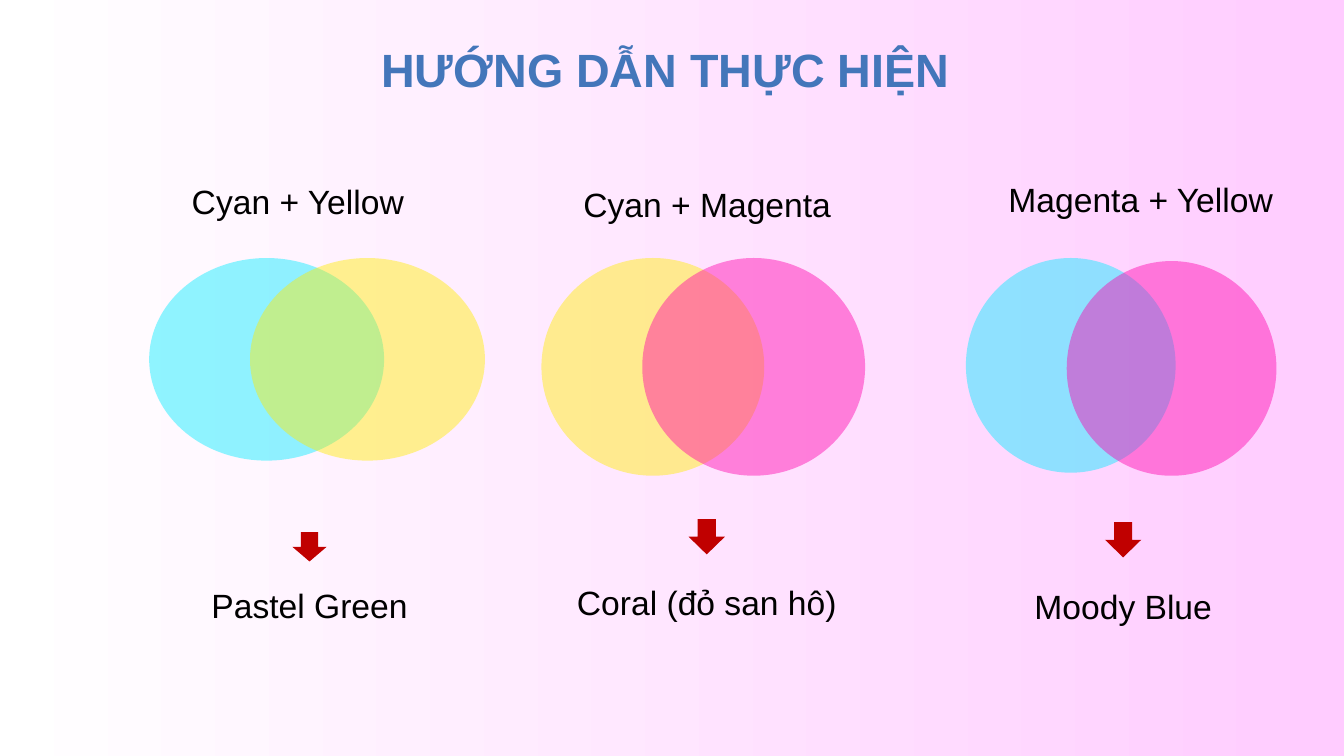
from pptx import Presentation
from pptx.dml.color import RGBColor
from pptx.enum.shapes import MSO_SHAPE as SHAPE
from pptx.enum.text import MSO_ANCHOR as ANCHOR, MSO_AUTO_SIZE as AUTO, PP_ALIGN as ALIGN
from pptx.oxml.ns import qn
from pptx.util import Inches, Pt
from lxml import etree

CYAN, YELLOW, MAGENTA = "00EDFF", "FFED00", "FF00AB"
TEXT_W, TEXT_H = 3.5, 0.5


def rgb(value):
    return RGBColor.from_string(value)


def place(sp, x, y, w, h):
    sp.left, sp.top, sp.width, sp.height = (Inches(v) for v in (x, y, w, h))


def write(sp, text, size=24, color="000000", bold=False):
    tf = sp.text_frame
    tf.word_wrap = True
    tf.auto_size = AUTO.NONE
    tf.vertical_anchor = ANCHOR.TOP
    p = tf.paragraphs[0]
    p.alignment = ALIGN.CENTER
    r = p.add_run()
    r.text = text
    r.font.name = "Arial"
    r.font.size = Pt(size)
    r.font.bold = bold
    r.font.color.rgb = rgb(color)


def add_label(s, text, center, y):
    sp = s.shapes.add_textbox(0, 0, 0, 0)
    place(sp, center - TEXT_W / 2, y, TEXT_W, TEXT_H)
    write(sp, text)


def add_solid(s, kind, x, y, w, h, color, alpha=None):
    sp = s.shapes.add_shape(kind, 0, 0, 0, 0)
    place(sp, x, y, w, h)
    sp.shadow.inherit = False
    sp.fill.solid()
    sp.fill.fore_color.rgb = rgb(color)
    sp.line.fill.background()
    if alpha is not None:
        clr = sp.fill._xPr.find(qn("a:solidFill"))[0]
        etree.SubElement(clr, qn("a:alpha")).set("val", str(alpha * 1000))


def add_background(s):
    fill = s.background.fill
    fill.gradient()
    fill.gradient_angle = 0
    for stop, color in zip(fill.gradient_stops, ("FFFFFF", "FFCCFF")):
        stop.color.rgb = rgb(color)
    for stop, position in zip(fill.gradient_stops, (0, 1)):
        stop.position = position


def add_title(s, x, y, w, h):
    sp = s.shapes.title
    place(sp, x, y, w, h)
    write(sp, "HƯỚNG DẪN THỰC HIỆN ", size=33.3, color="4376BA", bold=True)


def add_discs(s, x, y, w, h, colors, drop=0):
    for i, color in enumerate(colors):
        add_solid(s, SHAPE.OVAL, x + i, y + i * drop, w, h, color, alpha=44)


def add_result(s, center, y, w, h, text, text_y):
    add_solid(s, SHAPE.DOWN_ARROW, center - w / 2, y, w, h, "C00000")
    add_label(s, text, center, text_y)


def main():
    prs = Presentation()
    prs.slide_width, prs.slide_height = Inches(13.33), Inches(7.5)
    s = prs.slides.add_slide(prs.slide_layouts[5])
    add_background(s)
    add_title(s, 2.97, 0.36, 7.39, 0.66)

    add_label(s, "Cyan + Yellow ", 3, 1.75)
    add_discs(s, 1.48, 2.56, 2.33, 2.01, (CYAN, YELLOW))
    add_result(s, 3.07, 5.28, 0.34, 0.29, "Pastel Green", 5.75)

    add_label(s, "Cyan + Magenta ", 7.06, 1.78)
    add_discs(s, 5.37, 2.56, 2.21, 2.16, (YELLOW, MAGENTA))
    add_result(s, 7.01, 5.15, 0.36, 0.35, "Coral (đỏ san hô)", 5.72)

    add_label(s, "Magenta + Yellow ", 11.36, 1.73)
    add_discs(s, 9.58, 2.56, 2.08, 2.13, (CYAN, MAGENTA), drop=0.03)
    add_result(s, 11.14, 5.18, 0.36, 0.35, "Moody Blue", 5.76)

    prs.save("out.pptx")


if __name__ == "__main__":
    main()
